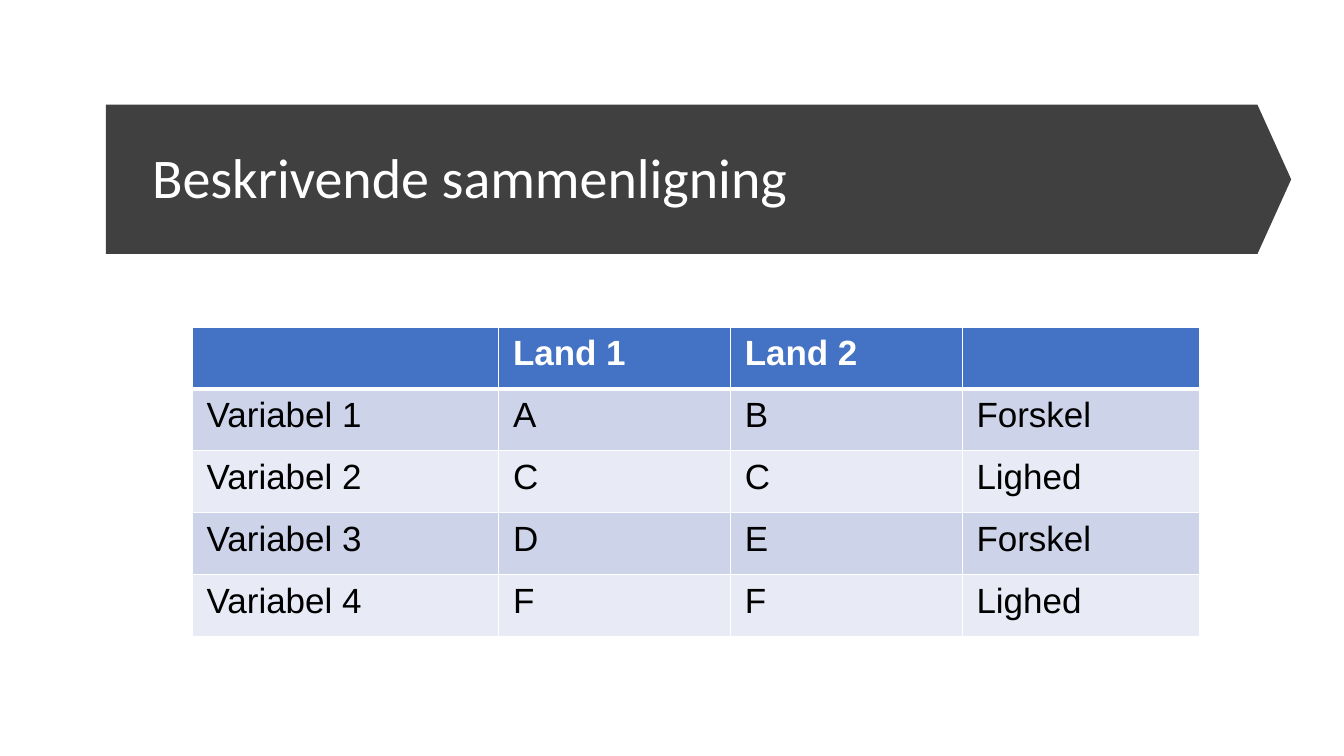
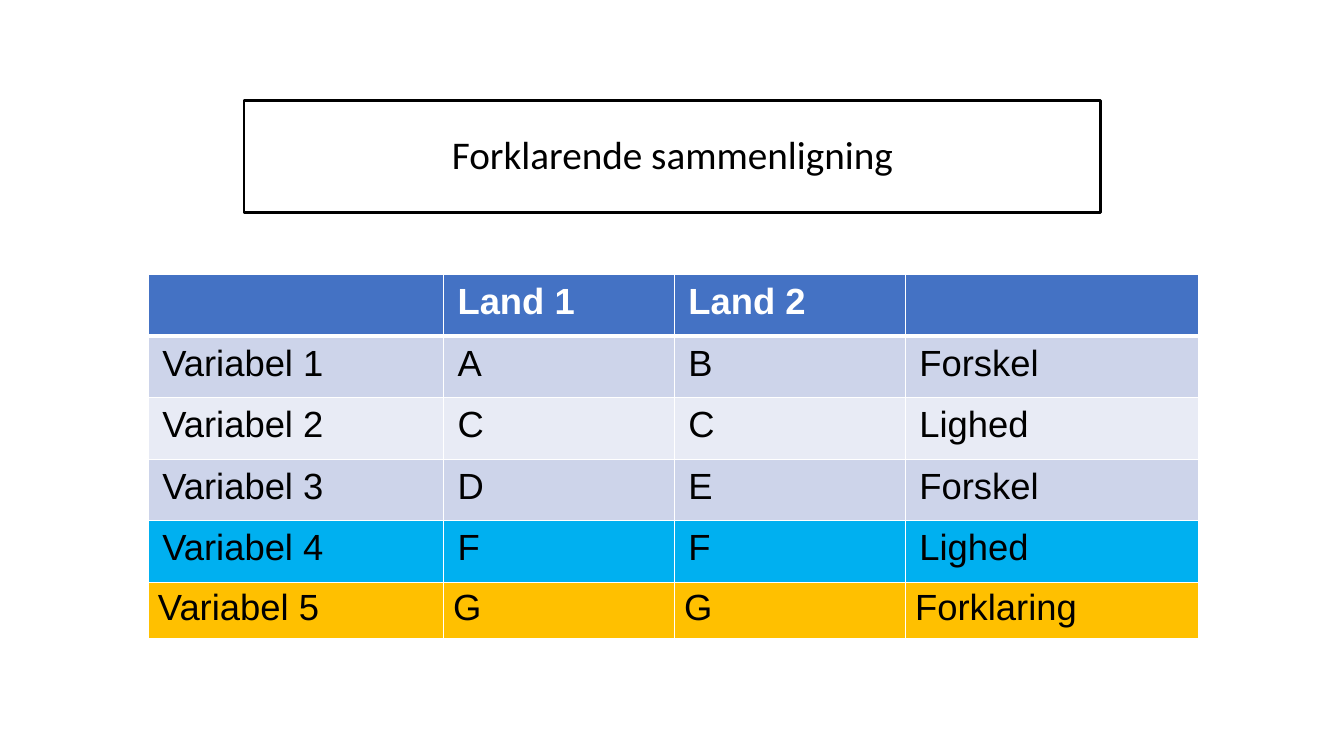
from lxml import etree
from pptx import Presentation
from pptx.dml.color import RGBColor
from pptx.enum import shapes, text
from pptx.oxml import ns
from pptx.util import Cm, Pt

WHITE, BLACK, CHARCOAL, BLUE = "FFFFFF", "000000", "404040", "4472C4"
BANDS = ["CDD4EA", "E8EBF5"]
SKY, AMBER = "00B0F0", "FFC000"
TITLE_FONT, TABLE_FONT = "Calibri", "Arial"
WIDE_MARGINS, NARROW_MARGINS = (0.36, 0.18), (0.25, 0.13)

HEADER = ["", "Land 1", "Land 2", ""]
VARIABLES = [
    ["Variabel 1", "A", "B", "Forskel"],
    ["Variabel 2", "C", "C", "Lighed"],
    ["Variabel 3", "D", "E", "Forskel"],
    ["Variabel 4", "F", "F", "Lighed"],
]
EXPLANATION = ["Variabel 5", "G", "G", "Forklaring"]

# Lengths in centimetres, text sizes in points
DESCRIPTIVE = dict(
    title="Beskrivende sammenligning", title_box=(3.58, 3.35, 27.84, 2.39),
    title_size=40, title_color=WHITE, title_align=text.PP_ALIGN.LEFT,
    rows=[HEADER] + VARIABLES, origin=(4.85, 8.24),
    widths=[7.72, 5.84, 5.84, 5.99], heights=[1.56] * 5,
    size=25, highlights={}, narrow_rows=(),
)
EXPLANATORY = dict(
    title="Forklarende sammenligning", title_box=(6.15, 2.54, 21.59, 2.82),
    title_size=28, title_color=BLACK, title_align=text.PP_ALIGN.CENTER,
    rows=[HEADER] + VARIABLES + [EXPLANATION], origin=(3.73, 6.92),
    widths=[7.44, 5.82, 5.82, 7.39], heights=[1.55] * 5 + [1.43],
    size=26, highlights={4: SKY, 5: AMBER}, narrow_rows=(5,),
)
BANNER_BOX = (2.67, 2.64, 29.87, 3.76)


def rgb(color):
    return RGBColor.from_string(color)


def paint(target, color):
    target.fill.solid()
    target.fill.fore_color.rgb = rgb(color)


def cm(lengths):
    return [Cm(length) for length in lengths]


def write(paragraph, words, font, size, color, bold=False):
    run = paragraph.add_run()
    run.text = words
    run.font.name, run.font.size, run.font.bold = font, Pt(size), bold
    run.font.color.rgb = rgb(color)


def add_title(slide, content):
    title = slide.shapes.title
    title.left, title.top, title.width, title.height = cm(content["title_box"])
    frame = title.text_frame
    frame.word_wrap = True
    frame.auto_size = text.MSO_AUTO_SIZE.NONE
    frame.vertical_anchor = text.MSO_ANCHOR.MIDDLE
    paragraph = frame.paragraphs[0]
    paragraph.alignment = content["title_align"]
    paragraph.line_spacing = 0.9
    write(paragraph, content["title"], TITLE_FONT, content["title_size"], content["title_color"])
    return title


def add_banner(slide):
    """Put the dark arrow band behind the title."""
    banner = slide.shapes.add_shape(shapes.MSO_SHAPE.PENTAGON, *cm(BANNER_BOX))
    banner.adjustments[0] = 0.226
    banner.shadow.inherit = False
    paint(banner, CHARCOAL)
    banner.line.fill.background()
    slide.shapes.title._element.addprevious(banner._element)


def border(cell, row):
    """Draw white cell edges, with a thick rule under the header."""
    properties = cell._tc.get_or_add_tcPr()
    widths = {"L": 1, "R": 1, "T": 3 if row == 1 else 1, "B": 3 if row == 0 else 1}
    for side, width in widths.items():
        edge = etree.SubElement(properties, ns.qn(f"a:ln{side}"), w=str(Pt(width)))
        fill = etree.SubElement(edge, ns.qn("a:solidFill"))
        etree.SubElement(fill, ns.qn("a:srgbClr"), val=WHITE)


def add_comparison(slide, content):
    rows, widths, heights = content["rows"], content["widths"], content["heights"]
    table = slide.shapes.add_table(
        len(rows), len(widths), *cm(content["origin"]), Cm(sum(widths)), Cm(sum(heights))
    ).table
    for column, width in zip(table.columns, widths):
        column.width = Cm(width)
    for r, (values, height) in enumerate(zip(rows, heights)):
        table.rows[r].height = Cm(height)
        header = r == 0
        band = BLUE if header else BANDS[(r - 1) % 2]
        margins = NARROW_MARGINS if r in content["narrow_rows"] else WIDE_MARGINS
        for c, value in enumerate(values):
            cell = table.cell(r, c)
            border(cell, r)
            paint(cell, content["highlights"].get(r, band))
            cell.margin_left = cell.margin_right = Cm(margins[0])
            cell.margin_top = cell.margin_bottom = Cm(margins[1])
            if value:
                write(cell.text_frame.paragraphs[0], value, TABLE_FONT, content["size"],
                      WHITE if header else BLACK, header)


def add_slide(deck, content):
    slide = deck.slides.add_slide(deck.slide_layouts[5])
    title = add_title(slide, content)
    add_comparison(slide, content)
    return slide, title


def main():
    deck = Presentation()
    deck.slide_width, deck.slide_height = Cm(33.87), Cm(19.05)

    descriptive, _ = add_slide(deck, DESCRIPTIVE)
    add_banner(descriptive)

    _, framed_title = add_slide(deck, EXPLANATORY)
    paint(framed_title, WHITE)
    framed_title.line.color.rgb = rgb(BLACK)
    framed_title.line.width = Pt(2)

    deck.save("out.pptx")


if __name__ == "__main__":
    main()
